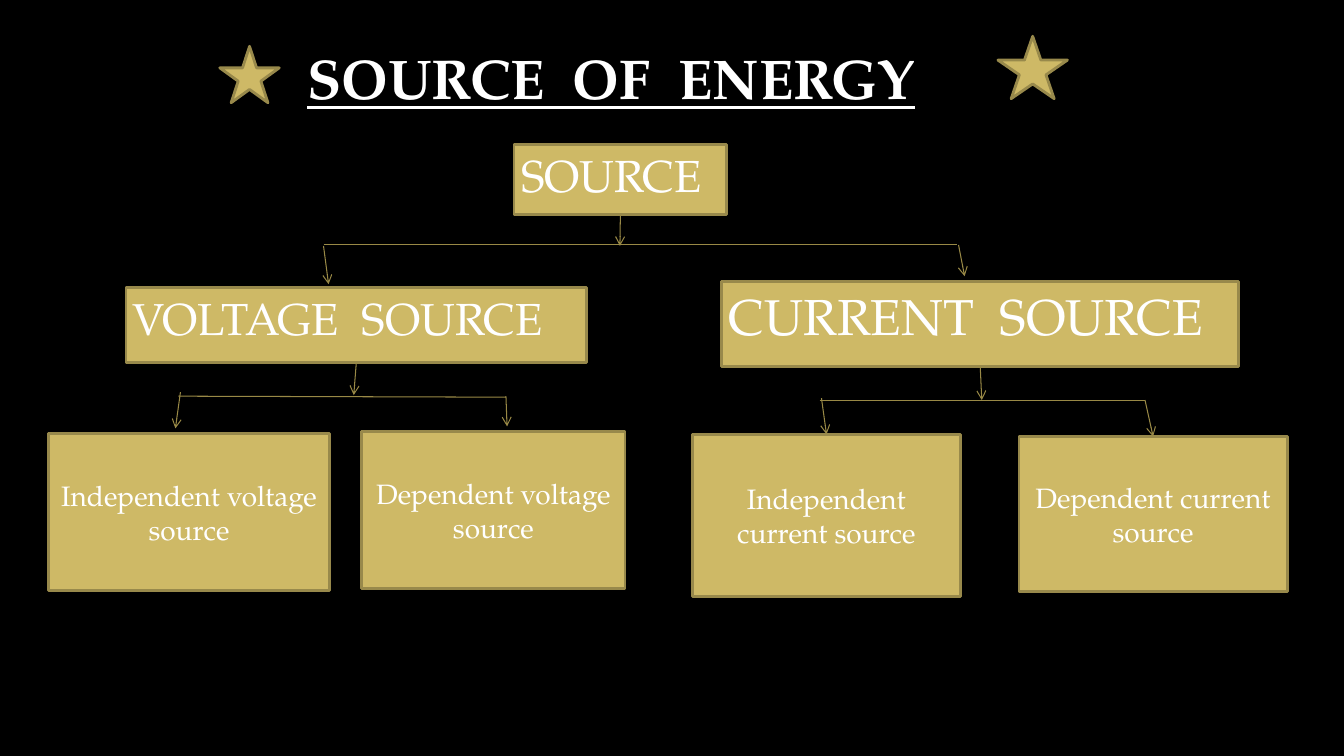
import pptx
import pptx.util
import pptx.dml.color
import pptx.enum.shapes
import pptx.enum.text
import pptx.oxml
import pptx.oxml.ns
import lxml.etree

Pt = pptx.util.Pt
RGB = pptx.dml.color.RGBColor.from_string
SHAPE = pptx.enum.shapes.MSO_SHAPE
ALIGN = pptx.enum.text.PP_ALIGN
ANCHOR = pptx.enum.text.MSO_ANCHOR

THEME = {
    "font": "TeX Gyre Pagella",
    "background": RGB("000000"), "text": RGB("FFFFFF"),
    "gold": RGB("CEB966"), "border": RGB("98894B"), "line": RGB("998946"),
    "title": 40, "large": 36, "heading": 32, "leaf": 20,
}


def write_text(shape, text, size, align, frame_format, **font_format):
    frame = shape.text_frame
    for name, value in frame_format.items():
        setattr(frame, name, value)
    para = frame.paragraphs[0]
    para.alignment = align
    span = para.add_run()
    span.text = text
    span.font.color.rgb = THEME["text"]
    for name, value in {"name": THEME["font"], "size": Pt(size), **font_format}.items():
        setattr(span.font, name, value)


def add_gold_shape(kind, left, top, width, height):
    shape = page.shapes.add_shape(kind, Pt(left), Pt(top), Pt(width), Pt(height))
    shape.shadow.inherit = False
    shape.fill.solid()
    shape.fill.fore_color.rgb = THEME["gold"]
    shape.line.color.rgb = THEME["border"]
    shape.line.width = Pt(2)
    return shape


deck = pptx.Presentation()
deck.slide_width, deck.slide_height = Pt(960), Pt(540)
page = deck.slides.add_slide(deck.slide_layouts[5])
page.background.fill.solid()
page.background.fill.fore_color.rgb = THEME["background"]

# Title
title = page.shapes.title
title_place = {"left": 212.4, "top": 27.4, "width": 482.4, "height": 55.4}
for name, value in title_place.items():
    setattr(title, name, Pt(value))
write_text(title, "SOURCE  OF  ENERGY", THEME["title"], ALIGN.LEFT,
           {"word_wrap": True, "vertical_anchor": ANCHOR.TOP},
           bold=True, underline=True)

# Stars beside the title
for place in [(157, 33.1, 42.5, 40.3), (712.8, 25.9, 49.7, 44.6)]:
    add_gold_shape(SHAPE.STAR_5_POINT, *place)

# Boxes of the tree: headings sit top left, leaves are centred
heading_format = {"word_wrap": True, "vertical_anchor": ANCHOR.TOP,
                  "margin_left": Pt(5), "margin_right": Pt(0), "margin_top": Pt(2.5)}
leaf_format = {"word_wrap": True, "vertical_anchor": ANCHOR.MIDDLE}
tree = [
    ("SOURCE", "heading", (367.2, 103, 151.9, 50.4)),
    ("VOLTAGE  SOURCE", "heading", (90, 205.2, 329, 54)),
    ("CURRENT  SOURCE", "large", (515.5, 200.9, 369.4, 61.2)),
    ("Independent voltage source", "leaf", (34.6, 309.6, 200.9, 112.3)),
    ("Dependent voltage source", "leaf", (258.5, 308.2, 187.9, 112.3)),
    ("Independent current source", "leaf", (494.6, 310.3, 191.5, 115.9)),
    ("Dependent current source", "leaf", (727.9, 311.8, 191.5, 110.9)),
]
boxes = {}
for label, level, place in tree:
    box = add_gold_shape(SHAPE.RECTANGLE, *place)
    is_leaf = level == "leaf"
    write_text(box, label, THEME[level], ALIGN.CENTER if is_leaf else ALIGN.LEFT,
               leaf_format if is_leaf else heading_format)
    boxes[label] = box

# Branches: start, end, arrowhead, box left from below, box entered from above
branches = [
    ((443.2, 153.4), (442.8, 175.7), True, "SOURCE", None),
    ((231.1, 175), (683.3, 175), False, None, None),
    ((231.1, 175.7), (234.7, 203), True, None, None),
    ((684.7, 175), (689, 197.3), True, None, None),
    ((254.5, 259.2), (252.7, 282.2), True, "VOLTAGE  SOURCE", None),
    ((127.4, 283), (361.4, 283.7), False, None, None),
    ((128.9, 280.1), (125.3, 306), True, None, None),
    ((361.4, 283), (362.2, 304.6), True, None, None),
    ((700.2, 262.1), (701.3, 285.8), True, "CURRENT  SOURCE", None),
    ((585.4, 285.8), (817.9, 285.8), False, None, None),
    ((586.8, 284.4), (590.4, 310.3), True, None, "Independent current source"),
    ((817.9, 285.8), (823.7, 311.8), True, None, "Dependent current source"),
]
for start, end, has_arrow, parent, child in branches:
    branch = page.shapes.add_connector(
        pptx.enum.shapes.MSO_CONNECTOR.STRAIGHT, *map(Pt, start + end))
    branch.line.color.rgb = THEME["line"]
    branch.line.width = Pt(0.75)
    if parent:
        branch.begin_connect(boxes[parent], 2)
    if child:
        branch.end_connect(boxes[child], 0)
    if has_arrow:
        lxml.etree.SubElement(branch.line._get_or_add_ln(),
                              pptx.oxml.ns.qn("a:tailEnd"), type="arrow")
    lxml.etree.SubElement(branch._element.spPr, pptx.oxml.ns.qn("a:effectLst"))

deck.save("out.pptx")
